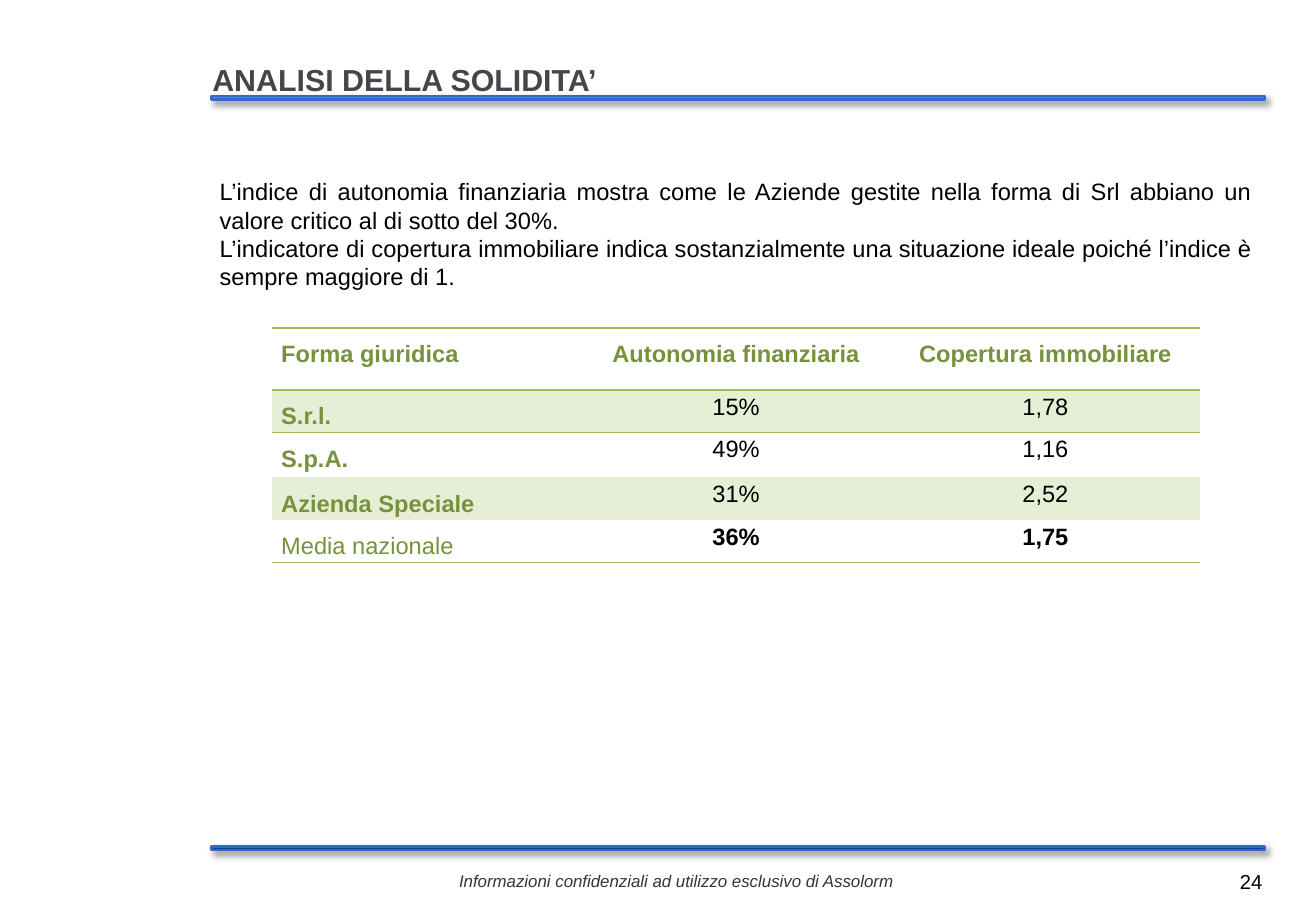
from lxml.etree import SubElement
from pptx import Presentation
from pptx.dml.color import RGBColor
from pptx.enum.shapes import MSO_SHAPE
from pptx.enum.text import PP_ALIGN as Align
from pptx.oxml import parse_xml
from pptx.oxml.ns import nsdecls, qn
from pptx.util import Pt

GREEN, BORDER, BAND, BLACK = "76923C", "9BBB59", "E6EED5", "000000"
NO_STYLE = "{2D5ABB26-0587-4C30-8999-92F81FD0307C}"
TABLE_ROWS = [
    ("Forma giuridica", "Autonomia finanziaria", "Copertura immobiliare"),
    ("S.r.l.", "15%", "1,78"),
    ("S.p.A.", "49%", "1,16"),
    ("Azienda Speciale", "31%", "2,52"),
    ("Media nazionale", "36%", "1,75"),
]
ROW_HEIGHTS = [36.72, 25.2, 26.64, 25.2, 25.2]
COLUMN_WIDTH = 183.36


def color(value):
    return RGBColor.from_string(value)


def format_paragraph(paragraph, text, font, **layout):
    paragraph.text = text
    for name, value in layout.items():
        setattr(paragraph, name, value)
    values = {"name": "Arial", **font}
    paragraph.font.color.rgb = color(values.pop("color"))
    for name, value in values.items():
        setattr(paragraph.font, name, value)


def add_text(slide, box, lines, font, alignment=Align.LEFT, wrap=True):
    frame = slide.shapes.add_textbox(*map(Pt, box)).text_frame
    frame.word_wrap = wrap
    for index, line in enumerate(lines):
        paragraph = frame.add_paragraph() if index else frame.paragraphs[0]
        format_paragraph(paragraph, line, font, alignment=alignment)


def add_rule(slide, top, fill):
    shape = slide.shapes.add_shape(
        MSO_SHAPE.RECTANGLE, Pt(125.3), Pt(top), Pt(624.2), Pt(2.2))
    shape.fill.solid()
    shape.fill.fore_color.rgb = color(fill)
    shape.line.color.rgb = color("3366CC")
    shape.line.width = Pt(1.5)
    # Soft shadow to the lower right
    shape._element.spPr.append(parse_xml(
        f'<a:effectLst {nsdecls("a")}>'
        f'<a:outerShdw blurRad="{Pt(4)}" dist="{Pt(3)}" dir="2700000" '
        'algn="tl" rotWithShape="0"><a:srgbClr val="000000">'
        '<a:alpha val="40000"/></a:srgbClr></a:outerShdw></a:effectLst>'))


def add_border(cell, side):
    properties = cell._tc.get_or_add_tcPr()
    line = SubElement(properties, qn(f"a:ln{side}"), w=str(Pt(1)))
    fill = SubElement(line, qn("a:solidFill"))
    SubElement(fill, qn("a:srgbClr"), val=BORDER)


def format_cell(cell, text, row, column):
    last = len(TABLE_ROWS) - 1
    margins = {"margin_left": 5.4, "margin_right": 5.4,
               "margin_top": 0, "margin_bottom": 0}
    for name, value in margins.items():
        setattr(cell, name, Pt(value))

    # Lines around the header and under the last row
    if row in (0, 1):
        add_border(cell, "T")
    if row in (0, last):
        add_border(cell, "B")

    if row in (1, 3):
        cell.fill.solid()
        cell.fill.fore_color.rgb = color(BAND)
    else:
        cell.fill.background()

    # Labels are bold except in the last row, where the values are
    label = row == 0 or column == 0
    font = {"size": Pt(14), "color": GREEN if label else BLACK,
            "bold": label != (row == last)}
    format_paragraph(cell.text_frame.paragraphs[0], text, font,
                     alignment=Align.CENTER if column else Align.JUSTIFY,
                     line_spacing=1.5 if label else 1.15)


def add_index_table(slide):
    columns = len(TABLE_ROWS[0])
    table = slide.shapes.add_table(
        len(TABLE_ROWS), columns, Pt(161.3), Pt(194.4),
        Pt(COLUMN_WIDTH * columns), Pt(sum(ROW_HEIGHTS))).table
    table.first_row = table.horz_banding = False
    table._tbl.tblPr.find(qn("a:tableStyleId")).text = NO_STYLE
    for column in table.columns:
        column.width = Pt(COLUMN_WIDTH)
    for row, texts in enumerate(TABLE_ROWS):
        table.rows[row].height = Pt(ROW_HEIGHTS[row])
        for column, text in enumerate(texts):
            format_cell(table.cell(row, column), text, row, column)


def main():
    presentation = Presentation()
    presentation.slide_width, presentation.slide_height = Pt(780), Pt(540)
    slide = presentation.slides.add_slide(presentation.slide_layouts[6])

    # Rules and footer
    add_rule(slide, 56.9, "808080")
    add_rule(slide, 501.8, "05438D")
    add_text(slide, (265, 512.6, 275, 19.4),
             ["Informazioni confidenziali ad utilizzo esclusivo di Assolorm"],
             {"size": Pt(10), "color": "353535", "italic": True}, wrap=False)
    add_text(slide, (587.5, 512, 167.8, 28.8), ["24"],
             {"size": Pt(12), "color": BLACK}, Align.RIGHT)

    # Title and comment
    add_text(slide, (118.8, 33, 542.2, 50), ["ANALISI DELLA SOLIDITA’"],
             {"size": Pt(18), "color": "464646", "bold": True})
    add_text(slide, (123.1, 101.5, 626.4, 74.9),
             ["L’indice di autonomia finanziaria mostra come le Aziende gestite "
              "nella forma di Srl abbiano un valore critico al di sotto del 30%.",
              "L’indicatore di copertura immobiliare indica sostanzialmente una "
              "situazione ideale poiché l’indice è sempre maggiore di 1."],
             {"size": Pt(14), "color": BLACK}, Align.JUSTIFY)

    # Indices by legal form
    add_index_table(slide)
    presentation.save("out.pptx")


if __name__ == "__main__":
    main()
